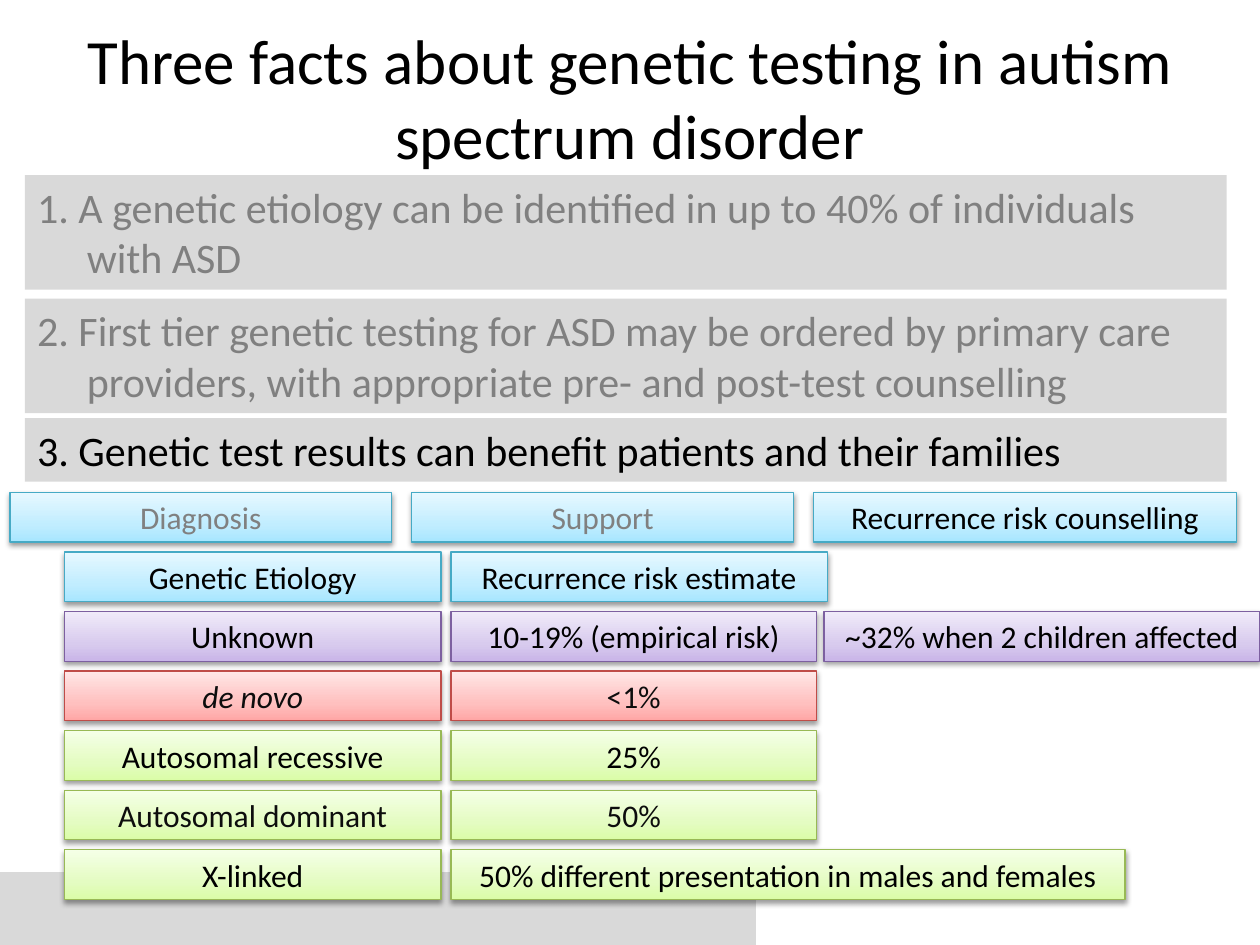
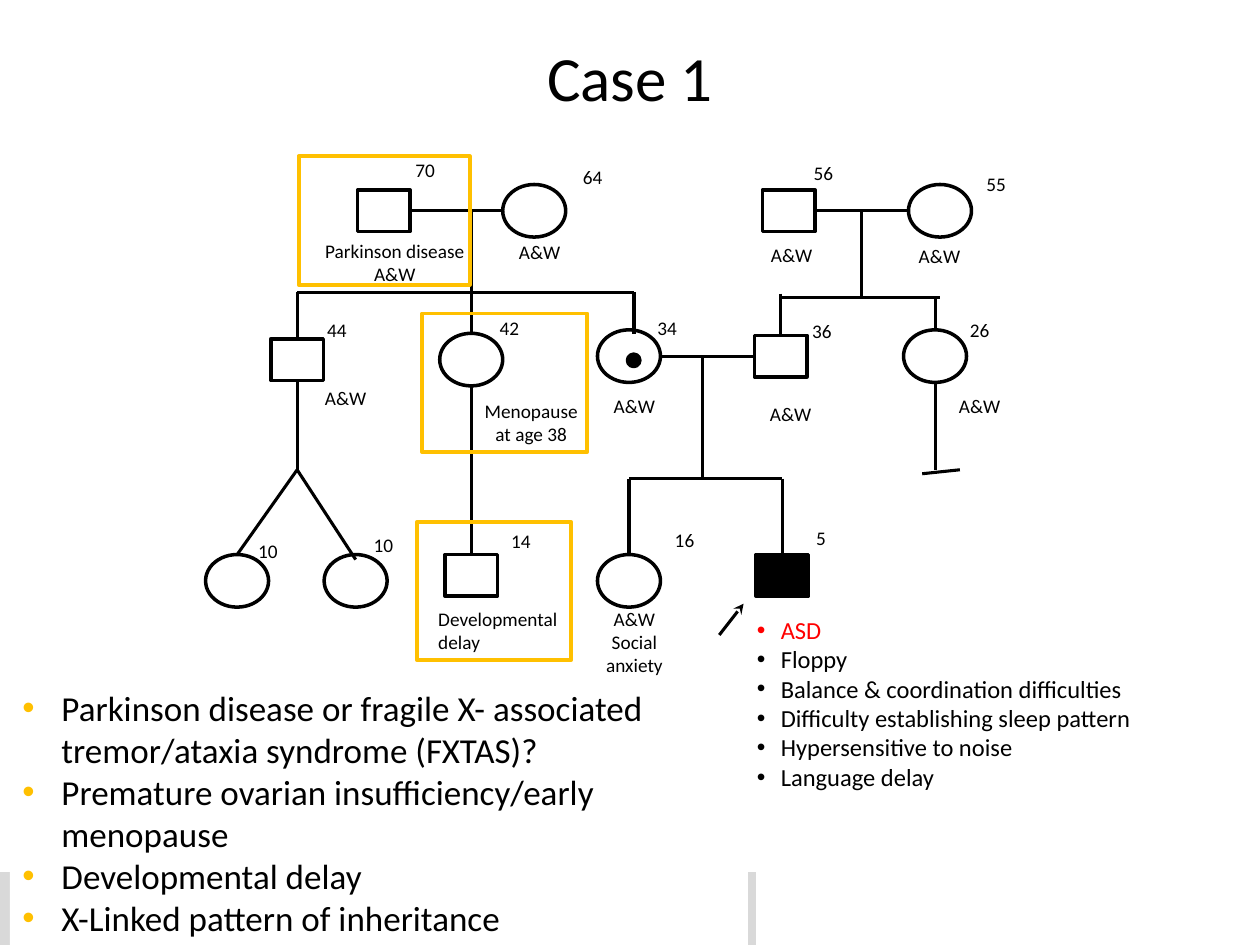
from copy import deepcopy

from lxml import etree
from pptx import Presentation
from pptx.dml.color import RGBColor
from pptx.enum.shapes import MSO_CONNECTOR, MSO_SHAPE
from pptx.enum.text import MSO_ANCHOR, PP_ALIGN
from pptx.oxml.ns import qn
from pptx.util import Cm, Pt

RECT, OVAL = MSO_SHAPE.RECTANGLE, MSO_SHAPE.OVAL
STRAIGHT = MSO_CONNECTOR.STRAIGHT
LEFT_ALIGN, CENTER = PP_ALIGN.LEFT, PP_ALIGN.CENTER
TOP_ANCHOR, MIDDLE = MSO_ANCHOR.TOP, MSO_ANCHOR.MIDDLE
TOP, LEFT, BOTTOM, RIGHT = range(4)

FONT = "Calibri"
COLORS = {
    "black": "000000", "ink": "0D0D0D", "faded": "808080", "band": "D9D9D9",
    "white": "FFFFFF", "red": "FF0000", "amber": "FFC000",
}
GLOSSES = {
    "blue": ("A7E6FF", "C1EDFF", "E7F8FF", "46AAC5"),
    "purple": ("C9B5E8", "D8CBEE", "F0EAF9", "7D60A0"),
    "rose": ("FFA6A5", "FFC0BF", "FFE7E7", "BF4C48"),
    "green": ("DAFDA7", "E4FCC2", "F5FFE7", "98B955"),
}

FACTS_TITLE = "Three facts about genetic testing in autism spectrum disorder"
FACTS = [
    ("1. A genetic etiology can be identified in up to 40% of individuals with ASD",
     3.53, 2.31, "faded"),
    ("2. First tier genetic testing for ASD may be ordered by primary care providers, "
     "with appropriate pre- and post-test counselling", 6.02, 2.31, "faded"),
    ("3. Genetic test results can benefit patients and their families",
     8.43, 1.28, "black"),
]
BENEFITS = [
    ("Diagnosis", 7.7, "faded"),
    ("Support", 7.7, "faded"),
    ("Recurrence risk counselling", 8.53, "black"),
]
RISKS = [
    ("Genetic Etiology", "Recurrence risk estimate", 7.59, "blue", "black"),
    ("Unknown", "10-19% (empirical risk)", 7.37, "purple", "black"),
    ("de novo", "<1%", 7.37, "rose", "ink"),
    ("Autosomal recessive", "25%", 7.37, "green", "black"),
    ("Autosomal dominant", "50%", 7.37, "green", "ink"),
    ("X-linked", "50% different presentation in males and females",
     13.59, "green", "black"),
]
SECOND_CHILD_RISK = "~32% when 2 children affected"
BENEFIT_TOP, BENEFIT_STEP = 9.93, 8.1
RISK_TOP, RISK_STEP, BOX_HEIGHT = 11.13, 1.2, 1

CASE_TITLE = "Case 1"
SYMBOL_SIZES = {RECT: (1.06, 0.84), OVAL: (1.27, 1.06)}
PEOPLE = {
    "grandfather": (RECT, 7.74, 4.25),
    "grandmother": (OVAL, 10.77, 4.25),
    "paternal grandfather": (RECT, 15.9, 4.25),
    "paternal grandmother": (OVAL, 18.95, 4.25),
    "uncle": (RECT, 5.99, 7.25),
    "aunt": (OVAL, 9.5, 7.25),
    "mother": (OVAL, 12.68, 7.18),
    "father": (RECT, 15.74, 7.18),
    "paternal aunt": (OVAL, 18.85, 7.18),
    "first twin": (OVAL, 4.78, 11.71),
    "second twin": (OVAL, 7.17, 11.71),
    "cousin": (RECT, 9.5, 11.6),
    "sister": (OVAL, 12.68, 11.71),
    "proband": (RECT, 15.77, 11.6),
}
RELATIONS = [
    (("grandfather", RIGHT), ("grandmother", LEFT)),
    (("paternal grandfather", RIGHT), ("paternal grandmother", LEFT)),
    (("mother", RIGHT), ("father", LEFT)),
    ((9.5, 4.25), (9.5, 5.89)),
    ((5.99, 5.89), (12.78, 5.89)),
    ((5.99, 5.89), ("uncle", TOP)),
    ((9.5, 5.89), ("aunt", TOP)),
    ((12.78, 5.89), (12.78, 6.73)),
    ((17.37, 4.25), (17.37, 5.99)),
    ((15.74, 5.99), (18.95, 5.99)),
    ((15.74, 5.92), ("father", TOP)),
    ((18.85, 5.99), ("paternal aunt", TOP)),
    ((14.17, 7.18), (14.17, 9.65)),
    ((12.68, 9.65), (15.77, 9.65)),
    ((12.68, 9.65), ("sister", TOP)),
    ((15.77, 9.65), ("proband", TOP)),
    (("uncle", BOTTOM), (5.99, 9.47)),
    ((5.99, 9.47), ("first twin", TOP)),
    ((5.99, 9.47), (7.17, 11.28)),
    (("aunt", BOTTOM), ("cousin", TOP)),
    (("paternal aunt", BOTTOM), (18.85, 9.47)),
    ((18.59, 9.55), (19.35, 9.47)),
]
PROBAND_ARROW = ((14.5, 12.8), (14.99, 12.17))
AGES = [
    ("70", 8.57, 3.07), ("64", 11.95, 3.2), ("56", 16.6, 3.12), ("55", 20.08, 3.35),
    ("44", 6.79, 6.3), ("42", 10.27, 6.25), ("34", 13.45, 6.25), ("36", 16.57, 6.32),
    ("26", 19.75, 6.3), ("10", 5.4, 10.74), ("10", 7.73, 10.62), ("14", 10.5, 10.54),
    ("16", 13.8, 10.52), ("5", 16.55, 10.49),
]
WELL = "A&W"
HEALTH_NOTES = [
    (["Parkinson disease", WELL], 7.96, 4.7, 3.33, CENTER),
    ([WELL], 10.88, 4.72, 1.9, CENTER),
    ([WELL], 15.96, 4.78, 1.9, CENTER),
    ([WELL], 18.94, 4.8, 1.9, CENTER),
    ([WELL], 6.97, 7.67, 1.9, CENTER),
    (["Menopause at age 38"], 10.71, 7.92, 2.62, CENTER),
    ([WELL], 12.79, 7.82, 1.9, CENTER),
    ([WELL], 15.94, 7.98, 1.9, CENTER),
    ([WELL], 19.75, 7.82, 1.9, CENTER),
    (["Developmental delay"], 10.31, 12.12, 3.45, LEFT_ALIGN),
    ([WELL, "Social anxiety"], 12.79, 12.12, 1.9, CENTER),
]
CLUE_FRAMES = [(6.02, 3.15, 3.45, 2.59), (8.51, 6.32, 3.33, 2.79), (8.41, 10.52, 3.1, 2.79)]
SYMPTOMS = [
    "ASD", "Floppy", "Balance & coordination difficulties",
    "Difficulty establishing sleep pattern", "Hypersensitive to noise", "Language delay",
]
FINDINGS = [
    "Parkinson disease or fragile X- associated tremor/ataxia syndrome (FXTAS)?",
    "Premature ovarian insufficiency/early menopause",
    "Developmental delay",
    "X-Linked pattern of inheritance",
]


def rgb(name):
    return RGBColor.from_string(COLORS.get(name, name))


def write(shape, paragraphs, size=18, color="black", align=LEFT_ALIGN, anchor=TOP_ANCHOR,
          italic=False, hang=0, bullet=None):
    frame = shape.text_frame
    frame.word_wrap = True
    frame.vertical_anchor = anchor
    for index, text in enumerate(paragraphs):
        paragraph = frame.add_paragraph() if index else frame.paragraphs[0]
        paragraph.alignment = align
        properties = paragraph._p.get_or_add_pPr()
        if hang:
            properties.set("marL", str(Cm(hang)))
            properties.set("indent", str(-Cm(hang)))
        if bullet:
            tint = etree.SubElement(properties, qn("a:buClr"))
            etree.SubElement(tint, qn("a:srgbClr"), val=COLORS[bullet])
            etree.SubElement(properties, qn("a:buFont"), typeface="Arial")
            etree.SubElement(properties, qn("a:buChar"), char="•")
        run = paragraph.add_run()
        run.text = text
        run.font.name = FONT
        run.font.size = Pt(size)
        run.font.italic = italic
        run.font.color.rgb = rgb(color)


def add_box(slide, x, y, width, height, fill=None, line=None, weight=2, kind=RECT):
    box = slide.shapes.add_shape(kind, Cm(x), Cm(y), Cm(width), Cm(height))
    box.shadow.inherit = False
    if fill:
        box.fill.solid()
        box.fill.fore_color.rgb = rgb(fill)
    else:
        box.fill.background()
    if line:
        box.line.color.rgb = rgb(line)
        box.line.width = Pt(weight)
    else:
        box.line.fill.background()
    return box


def add_label(slide, paragraphs, x, y, width, height, **text_format):
    label = slide.shapes.add_textbox(Cm(x), Cm(y), Cm(width), Cm(height))
    write(label, paragraphs, **text_format)
    return label


def add_glossy(slide, text, x, y, width, gloss, **text_format):
    *stops, edge = GLOSSES[gloss]
    box = add_box(slide, x, y, width, BOX_HEIGHT, line=edge, weight=0.75)
    box.fill.gradient()
    box.fill.gradient_angle = 90
    properties = box._element.spPr
    stop_list = properties.find(qn("a:gradFill")).find(qn("a:gsLst"))
    stop_list.insert(1, deepcopy(stop_list[0]))
    for stop, position, color in zip(box.fill.gradient_stops, (0, 0.35, 1), stops):
        stop.position = position
        stop.color.rgb = rgb(color)
    shadow = etree.SubElement(properties.find(qn("a:effectLst")), qn("a:outerShdw"),
                              blurRad=str(Pt(3.1)), dist=str(Pt(1.6)), dir="5400000",
                              rotWithShape="0")
    shade = etree.SubElement(shadow, qn("a:srgbClr"), val=COLORS["black"])
    etree.SubElement(shade, qn("a:alpha"), val="38000")
    write(box, [text], align=CENTER, anchor=MIDDLE, **text_format)


def add_line(slide, start, end):
    line = slide.shapes.add_connector(STRAIGHT, *map(Cm, start + end))
    line.line.color.rgb = rgb("black")
    line.line.width = Pt(1.75)
    etree.SubElement(line._element.spPr, qn("a:effectLst"))
    return line


def add_slide(deck, title, title_top):
    slide = deck.slides.add_slide(deck.slide_layouts[6])
    add_box(slide, 0, 17.58, 15.24, 1.47, fill="band")
    add_label(slide, [title], 1.1, title_top, 23.2, 3.18, size=36, align=CENTER, anchor=MIDDLE)
    return slide


def build_facts(deck):
    slide = add_slide(deck, FACTS_TITLE, 0.36)
    for fact, top, height, color in FACTS:
        band = add_box(slide, 0.5, top, 24.23, height, fill="band")
        write(band, [fact], size=24, color=color, hang=1)
    for column, (benefit, width, color) in enumerate(BENEFITS):
        add_glossy(slide, benefit, 0.2 + column * BENEFIT_STEP, BENEFIT_TOP, width, "blue",
                   color=color)
    for row, (etiology, risk, width, gloss, color) in enumerate(RISKS):
        top = RISK_TOP + row * RISK_STEP
        add_glossy(slide, etiology, 1.3, top, 7.59, gloss, color=color,
                   italic=etiology == "de novo")
        add_glossy(slide, risk, 9.09, top, width, gloss, color=color)
    add_glossy(slide, SECOND_CHILD_RISK, 16.61, RISK_TOP + RISK_STEP, 8.79, "purple")


def locate(end):
    if end[0] not in PEOPLE:
        return end
    name, side = end
    kind, x, y = PEOPLE[name]
    width, height = SYMBOL_SIZES[kind]
    across, down = ((0, -0.5), (-0.5, 0), (0, 0.5), (0.5, 0))[side]
    return x + across * width, y + down * height


def build_case(deck):
    slide = add_slide(deck, CASE_TITLE, -0.05)
    symbols = {}
    for name, (kind, x, y) in PEOPLE.items():
        width, height = SYMBOL_SIZES[kind]
        symbols[name] = add_box(slide, x - width / 2, y - height / 2, width, height,
                                fill="black" if name == "proband" else None,
                                line="black", kind=kind)
    for start, end in RELATIONS:
        line = add_line(slide, locate(start), locate(end))
        for place, join in ((start, line.begin_connect), (end, line.end_connect)):
            if place[0] in PEOPLE and PEOPLE[place[0]][0] == RECT:
                join(symbols[place[0]], place[1])
    arrow = add_line(slide, *PROBAND_ARROW)
    etree.SubElement(arrow.line._get_or_add_ln(), qn("a:tailEnd"), type="stealth")

    for age, x, y in AGES:
        add_label(slide, [age], x - 0.78, y, 1.56, 0.74, size=11, align=CENTER)
    for note, x, y, width, align in HEALTH_NOTES:
        add_label(slide, note, x - width / 2, y, width, 0.74, size=11, align=align)
    for frame in CLUE_FRAMES:
        add_box(slide, *frame, line="amber", weight=2.25)

    symptoms = add_label(slide, SYMPTOMS, 15.01, 12.27, 8.89, 3.84, size=14, hang=0.48,
                         bullet="black")
    diagnosis = symptoms.text_frame.paragraphs[0]
    diagnosis.runs[0].font.color.rgb = rgb("red")
    diagnosis._p.pPr.find(qn("a:buClr"))[0].set("val", COLORS["red"])
    findings = add_box(slide, 0.2, 13.72, 14.88, 5.33, fill="white")
    write(findings, FINDINGS, size=20, hang=0.79, bullet="amber")
    add_box(slide, 12.65, 7.14, 0.25, 0.25, fill="black", line="black", kind=OVAL)


def main():
    deck = Presentation()
    deck.slide_width, deck.slide_height = Cm(25.4), Cm(19.05)
    build_facts(deck)
    build_case(deck)
    deck.save("out.pptx")


if __name__ == "__main__":
    main()
